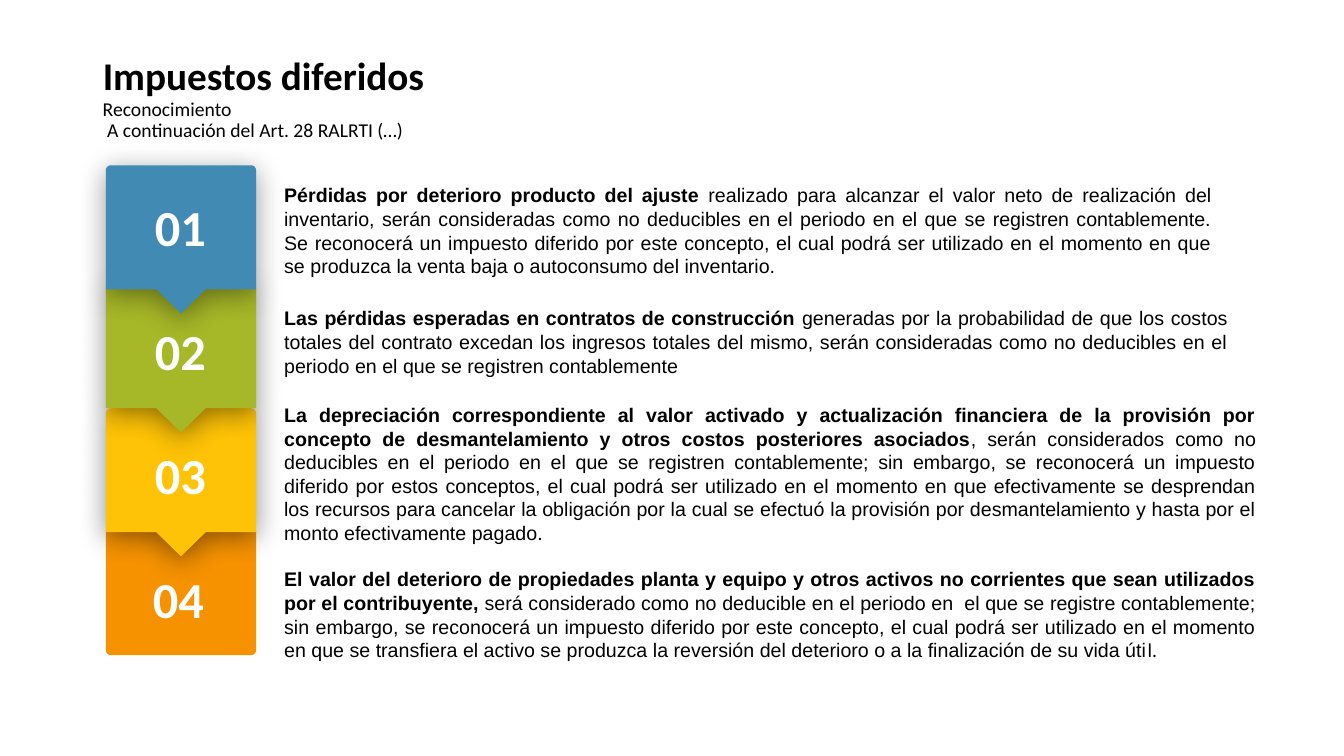
from math import cos, radians, sin

from lxml.etree import SubElement
from pptx import Presentation
from pptx.dml.color import RGBColor
from pptx.enum.text import MSO_ANCHOR as ANCHOR, PP_ALIGN as ALIGN
from pptx.oxml.ns import qn
from pptx.util import Inches, Pt

COLORS = {"blue": "418AB3", "green": "A6B727", "yellow": "FEC306",
          "orange": "F69200", "black": "000000", "white": "FFFFFF"}
TILE_LEFT, TILE_WIDTH, TILE_HEIGHT = 1.05, 1.49, 1.23
TIP_HEIGHT, TIP_HALF, CORNER = 0.24, 0.245, 0.05
TEXT_LEFT = 2.72
NUMBER_TOP, NUMBER_PITCH = 1.9, 1.23

# tile top, colour, shadow opacity, text top, text width, text height, bold, plain, ending
ITEMS = [
    (1.64, "blue", 40, 1.77, 9.4, 1.04,
     "Pérdidas por deterioro producto del ajuste ",
     "realizado para alcanzar el valor neto de realización del inventario, serán "
     "consideradas como no deducibles en el periodo en el que se registren "
     "contablemente. Se reconocerá un impuesto diferido por este concepto, el cual "
     "podrá ser utilizado en el momento en que se produzca la venta baja o "
     "autoconsumo del inventario.", ""),
    (2.82, "green", 43, 2.99, 9.56, 0.81,
     "Las pérdidas esperadas en contratos de construcción ",
     "generadas por la probabilidad de que los costos totales del contrato excedan "
     "los ingresos totales del mismo, serán consideradas como no deducibles en el "
     "periodo en el que se registren contablemente", ""),
    (4.05, "yellow", 43, 3.95, 9.84, 1.75,
     "La depreciación correspondiente al valor activado y actualización financiera "
     "de la provisión por concepto de desmantelamiento y otros costos posteriores "
     "asociados",
     ", serán considerados como no deducibles en el periodo en el que se registren "
     "contablemente; sin embargo, se reconocerá un impuesto diferido por estos "
     "conceptos, el cual podrá ser utilizado en el momento en que efectivamente se "
     "desprendan los recursos para cancelar la obligación por la cual se efectuó la "
     "provisión por desmantelamiento y hasta por el monto efectivamente pagado", "."),
    (5.27, "orange", 0, 5.58, 9.84, 1.04,
     "El valor del deterioro de propiedades planta y equipo y otros activos no "
     "corrientes que sean utilizados por el contribuyente, ",
     "será considerado como no deducible en el periodo en  el que se registre "
     "contablemente; sin embargo, se reconocerá un impuesto diferido por este "
     "concepto, el cual podrá ser utilizado en el momento en que se transfiera el "
     "activo se produzca la reversión del deterioro o a la finalización de su vida "
     "úti", "l."),
]


def add_run(p, text, size=14, font="Arial", color="black", bold=False):
    r = p.add_run()
    r.text = text
    r.font.size, r.font.name, r.font.bold = Pt(size), font, bold
    r.font.color.rgb = RGBColor.from_string(COLORS[color])


def add_text(slide, box, paragraphs, align=ALIGN.LEFT, anchor=ANCHOR.TOP, spacing=None):
    """Add a text box; each paragraph is a list of (text, format) runs."""
    tf = slide.shapes.add_textbox(*map(Inches, box)).text_frame
    tf.word_wrap, tf.vertical_anchor = True, anchor
    for i, runs in enumerate(paragraphs):
        p = tf.add_paragraph() if i else tf.paragraphs[0]
        p.alignment, p.line_spacing = align, spacing
        for text, style in runs:
            add_run(p, text, **style)


def add_shadow(sp, opacity):
    effects = sp._element.spPr.find(qn("a:effectLst"))
    shadow = SubElement(effects, qn("a:outerShdw"), blurRad=str(Pt(20)),
                        dist=str(Pt(4)), dir="5400000", algn="t", rotWithShape="0")
    color = SubElement(shadow, qn("a:srgbClr"), val=COLORS["black"])
    SubElement(color, qn("a:alpha"), val=str(opacity * 1000))


def arc(cx, cy, start):
    """Points of a quarter circle, clockwise from the start angle."""
    angles = [radians(start + step) for step in range(0, 91, 15)]
    return [(cx + CORNER * cos(a), cy + CORNER * sin(a)) for a in angles]


def add_tile(slide, left, top, width, height, color, opacity, last):
    """Tile with a pointer below; the last one is flat on top and round below."""
    right, bottom, middle = left + width, top + height, left + width / 2
    if last:
        points = [(left, top), (right, top)]
        points += arc(right - CORNER, bottom - CORNER, 0)
        points += arc(left + CORNER, bottom - CORNER, 90)
    else:
        points = arc(left + CORNER, top + CORNER, 180)
        points += arc(right - CORNER, top + CORNER, 270)
        points += [(right, bottom), (middle + TIP_HALF, bottom),
                   (middle, bottom + TIP_HEIGHT), (middle - TIP_HALF, bottom),
                   (left, bottom)]
    points = [(Inches(x), Inches(y)) for x, y in points]
    builder = slide.shapes.build_freeform(*points[0])
    builder.add_line_segments(points[1:], close=True)
    sp = builder.convert_to_shape()
    sp.fill.solid()
    sp.fill.fore_color.rgb = RGBColor.from_string(COLORS[color])
    sp.line.fill.background()
    sp.shadow.inherit = False
    if opacity:
        add_shadow(sp, opacity)


def add_heading(slide, left, top, width, height):
    title = slide.shapes.title
    title.left, title.top, title.width, title.height = map(
        Inches, (left, top, width, height))
    tf = title.text_frame
    tf.word_wrap, tf.vertical_anchor = True, ANCHOR.TOP
    p = tf.paragraphs[0]
    p.alignment, p.line_spacing = ALIGN.LEFT, 0.9
    add_run(p, "Impuestos diferidos", size=28, font="Calibri", bold=True)
    lines = ["Reconocimiento", " A continuación del Art. 28 RALRTI (…)"]
    add_text(slide, (left, top + 0.49, 5.62, 0.39),
             [[(line, {"font": "Calibri"})] for line in lines],
             anchor=ANCHOR.MIDDLE, spacing=0.9)


def add_tiles(slide, left, width):
    last = len(ITEMS) - 1
    for i in range(last, -1, -1):
        top, color, opacity = ITEMS[i][:3]
        add_tile(slide, left, top, width, TILE_HEIGHT, color, opacity, i == last)
    number_style = {"size": 36, "font": "Calibri", "color": "white", "bold": True}
    for i in range(len(ITEMS)):
        x = left + (0.14 if i == last else 0.16)
        add_text(slide, (x, NUMBER_TOP + i * NUMBER_PITCH, 1.16, 0.71),
                 [[(f"{i + 1:02}", number_style)]], align=ALIGN.CENTER)


def add_descriptions(slide, left):
    for _, _, _, top, width, height, bold, plain, ending in ITEMS:
        runs = [(bold, {"bold": True}), (plain, {})]
        if ending:
            runs.append((ending, {"font": "Calibri"}))
        add_text(slide, (left, top, width, height), [runs], align=ALIGN.JUSTIFY)


def main():
    prs = Presentation()
    prs.slide_width, prs.slide_height = Inches(13.33), Inches(7.5)
    slide = prs.slides.add_slide(prs.slide_layouts[5])
    add_heading(slide, 0.92, 0.51, 6.59, 1.04)
    add_tiles(slide, TILE_LEFT, TILE_WIDTH)
    add_descriptions(slide, TEXT_LEFT)
    prs.save("out.pptx")


if __name__ == "__main__":
    main()
